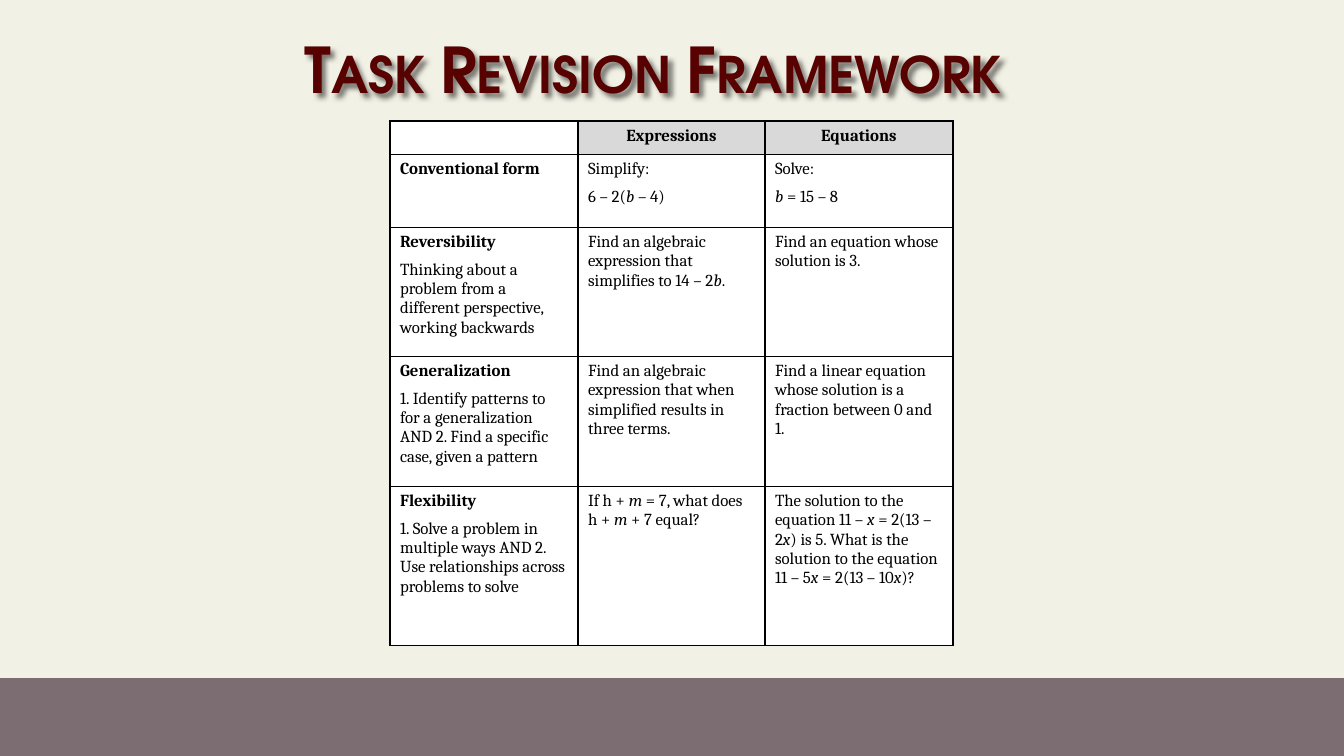
from lxml import etree
from pptx import Presentation, util as u
from pptx.dml.color import RGBColor
from pptx.enum import shapes, text
from pptx.oxml import parse_xml
from pptx.oxml.ns import nsdecls

TITLE = "Task Revision Framework"
# One list per cell, one string per paragraph; *...* marks italics.
FRAMEWORK = [
    [[""], ["Expressions"], ["Equations"]],
    [["Conventional form"],
     ["Simplify:", "6 – 2(*b* – 4)"],
     ["Solve:", "*b *= 15 – 8"]],
    [["Reversibility",
      "Thinking about a problem from a different perspective, working backwards"],
     ["Find an algebraic expression that simplifies to 14 – 2*b*."],
     ["Find an equation whose solution is 3."]],
    [["Generalization",
      "1. Identify patterns to for a generalization AND 2. "
      "Find a specific case, given a pattern"],
     ["Find an algebraic expression that when simplified results in three terms."],
     ["Find a linear equation whose solution is a fraction between 0 and 1."]],
    [["Flexibility",
      "1. Solve a problem in multiple ways AND 2. "
      "Use relationships across problems to solve"],
     ["If h + *m* = 7, what does h + *m* + 7 equal?"],
     ["The solution to the equation 11 – *x *= 2(13 – 2*x*) is 5. "
      "What is the solution to the equation 11 – 5*x* = 2(13 – 10*x*)?"]],
]
ROW_HEIGHTS = [33, 73, 129, 130, 159]
COLUMN_WIDTHS = [188, 187, 188]
TABLE_LEFT, TABLE_TOP = 390, 121
SLIDE_WIDTH, SLIDE_HEIGHT, BAND_TOP = 1344, 756, 678
PX_PER_INCH = 100.8


def px(length):
    return u.Emu(round(length * u.Inches(1) / PX_PER_INCH))


def paint(fill, color):
    fill.solid()
    fill.fore_color.rgb = RGBColor.from_string(color)


def add_run(paragraph, words, face, size, color, bold, italic=False):
    run = paragraph.add_run()
    run.text = words
    font = run.font
    font.name, font.size, font.bold, font.italic = face, u.Pt(size), bold, italic
    font.color.rgb = RGBColor.from_string(color)
    return run


def add_borders(cell):
    for side in ("lnL", "lnR", "lnT", "lnB"):
        cell._tc.get_or_add_tcPr().append(parse_xml(
            f'<a:{side} {nsdecls("a")} w="{u.Pt(1)}"><a:solidFill>'
            f'<a:srgbClr val="000000"/></a:solidFill></a:{side}>'))


def fill_cell(cell, paragraphs, row, column):
    add_borders(cell)
    paint(cell.fill, "D9D9D9" if row == 0 and column > 0 else "FFFFFF")
    cell.margin_bottom = 0
    for i, line in enumerate(paragraphs):
        frame = cell.text_frame
        paragraph = frame.add_paragraph() if i else frame.paragraphs[0]
        paragraph.space_after = u.Pt(6)
        if row == 0:
            paragraph.alignment = text.PP_ALIGN.CENTER
        bold = row == 0 or (column == 0 and i == 0)
        for part, words in enumerate(line.split("*")):
            if words or line == "":
                add_run(paragraph, words, "Cambria", 12, "000000", bold, part % 2 == 1)


def add_title(slide):
    title = slide.shapes.title
    title.left, title.top, title.width, title.height = map(px, (219, 9, 869, 128))
    frame = title.text_frame
    frame.word_wrap = True
    frame.auto_size = text.MSO_AUTO_SIZE.NONE
    frame.vertical_anchor = text.MSO_ANCHOR.MIDDLE
    paragraph = frame.paragraphs[0]
    paragraph.alignment = text.PP_ALIGN.CENTER
    paragraph.line_spacing = 0.9
    run = add_run(paragraph, TITLE, "TeX Gyre Adventor", 45, "570100", True)
    run.font._element.set("cap", "small")
    title._element.spPr.append(parse_xml(
        f'<a:effectLst {nsdecls("a")}><a:outerShdw blurRad="{px(5)}" dist="{px(5)}" '
        'dir="2700000" algn="tl" rotWithShape="0"><a:srgbClr val="000000">'
        '<a:alpha val="50000"/></a:srgbClr></a:outerShdw></a:effectLst>'))


def add_band(slide):
    band = slide.shapes.add_shape(
        shapes.MSO_SHAPE.RECTANGLE, 0, px(BAND_TOP),
        px(SLIDE_WIDTH), px(SLIDE_HEIGHT - BAND_TOP))
    band.shadow.inherit = False
    paint(band.fill, "7C6D72")
    band.line.fill.background()


def add_framework(slide):
    table = slide.shapes.add_table(
        len(ROW_HEIGHTS), len(COLUMN_WIDTHS), px(TABLE_LEFT), px(TABLE_TOP),
        px(sum(COLUMN_WIDTHS)), px(sum(ROW_HEIGHTS))).table
    for column, width in zip(table.columns, COLUMN_WIDTHS):
        column.width = px(width)
    for r, (height, cells) in enumerate(zip(ROW_HEIGHTS, FRAMEWORK)):
        table.rows[r].height = px(height)
        for c, paragraphs in enumerate(cells):
            fill_cell(table.cell(r, c), paragraphs, r, c)


def main():
    deck = Presentation()
    deck.slide_width, deck.slide_height = px(SLIDE_WIDTH), px(SLIDE_HEIGHT)
    slide = deck.slides.add_slide(deck.slide_layouts[5])
    paint(slide.background.fill, "F1F1E5")
    add_band(slide)
    add_title(slide)
    add_framework(slide)
    deck.save("out.pptx")


if __name__ == "__main__":
    main()
